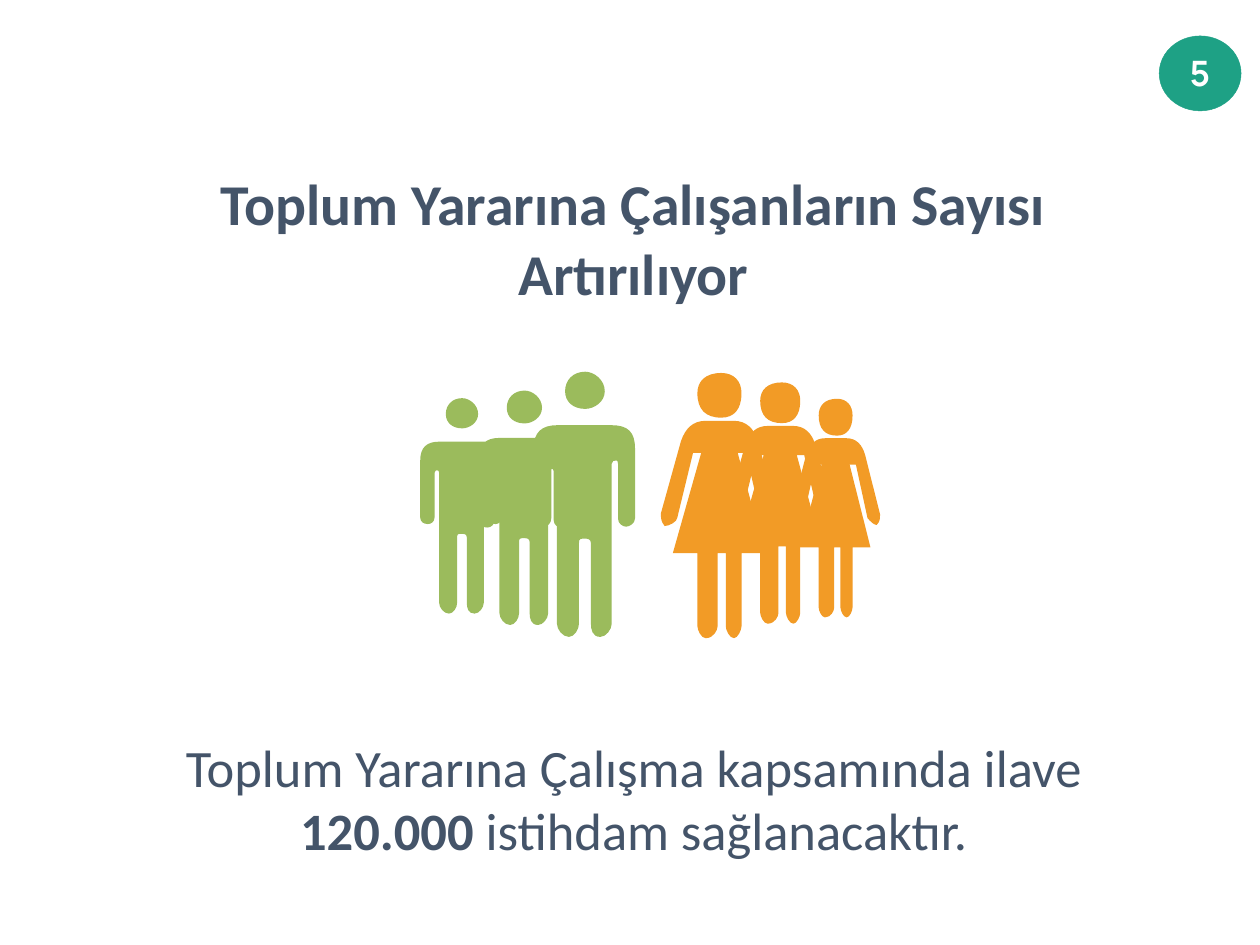
from lxml import etree
from pptx import Presentation, util as u
from pptx.dml.color import RGBColor
from pptx.enum import shapes, text
from pptx.oxml import ns

COLUMNS, ROWS = 20, 15
CELL = u.Inches(1)
SLATE, TEAL, GREEN, ORANGE, WHITE = "445469", "1EA185", "9BBB5C", "F29B26", "FFFFFF"

MAN = {
    "size": (161, 421),
    "body": [
        (124, 85), (37, 85), (13, 85, 0, 96, 0, 122), (0, 233),
        (0, 241, 6, 246, 15, 246), (22, 246, 28, 241, 28, 233), (28, 146),
        (28, 141, 32, 141, 32, 141), (35, 141, 37, 141, 37, 146), (37, 400),
        (37, 409, 46, 421, 56, 421), (65, 421, 72, 409, 72, 400), (72, 272),
        (72, 265, 74, 265, 82, 265), (84, 265, 91, 265, 91, 272), (91, 400),
        (91, 409, 93, 421, 106, 421), (115, 421, 124, 409, 124, 400), (124, 146),
        (124, 141, 128, 141, 132, 141), (132, 141, 134, 141, 134, 146), (134, 233),
        (134, 241, 141, 246, 147, 246), (152, 246, 161, 241, 161, 233), (161, 122),
        (161, 96, 150, 85, 124, 85)],
    "head": [
        (82, 0), (63, 0, 50, 13, 50, 31), (50, 48, 63, 59, 82, 59),
        (96, 59, 113, 48, 113, 31), (113, 13, 96, 0, 82, 0)],
}
WOMAN = {
    "size": (185, 421),
    "body": [
        (185, 223), (154, 108), (148, 88, 135, 76, 116, 76), (71, 76),
        (51, 76, 39, 88, 32, 108), (0, 223), (0, 230, 0, 236, 6, 243),
        (13, 243, 26, 236, 26, 230), (51, 127), (64, 127), (19, 286), (58, 286),
        (58, 402), (58, 408, 64, 421, 71, 421), (84, 421, 90, 408, 90, 402),
        (90, 286), (103, 286), (103, 402), (103, 408, 109, 421, 116, 421),
        (122, 421, 128, 408, 128, 402), (128, 286), (165, 286), (122, 127),
        (135, 127), (159, 230), (165, 236, 172, 243, 178, 243),
        (185, 236, 185, 230, 185, 223)],
    "head": [
        (96, 71), (116, 71, 128, 58, 128, 32), (128, 13, 116, 0, 96, 0),
        (71, 0, 58, 13, 58, 32), (58, 58, 71, 71, 96, 71)],
}


def color(value):
    """Turn a hex string into a colour."""
    return RGBColor.from_string(value)


def cells(*lengths):
    """Turn grid lengths into slide units."""
    return [u.Emu(round(length * CELL)) for length in lengths]


def paint(shape, fill):
    """Give a shape a flat fill without line or shadow."""
    shape.shadow.inherit = False
    shape.fill.solid()
    shape.fill.fore_color.rgb = color(fill)
    shape.line.fill.background()


def write(para, words, size, font="Calibri", fill=SLATE, bold=False):
    """Add a formatted run to a centred paragraph."""
    para.alignment = text.PP_ALIGN.CENTER
    span = para.add_run()
    span.text = words
    span.font.size = u.Pt(size)
    span.font.name = font
    span.font.bold = bold
    span.font.color.rgb = color(fill)


def text_area(page, box, inset, wrap=True, grow=False):
    """Add a text box and return its first paragraph."""
    frame = page.shapes.add_textbox(*cells(*box)).text_frame
    frame.word_wrap = wrap
    if grow:
        frame.auto_size = text.MSO_AUTO_SIZE.SHAPE_TO_FIT_TEXT
    frame.margin_left, frame.margin_right = cells(inset, inset)
    frame.margin_top, frame.margin_bottom = cells(inset / 2, inset / 2)
    return frame.paragraphs[0]


def outline_shape(group, steps, place):
    """Build a closed outline from corners (pairs) and curves (six numbers)."""
    points = [[place(*step[i:i + 2]) for i in range(0, len(step), 2)] for step in steps]
    ends = [step[-1] for step in points]
    builder = group.shapes.build_freeform(*ends[0])
    builder.add_line_segments(ends[1:], close=True)
    shape = builder.convert_to_shape()
    left, top = (min(axis) for axis in zip(*ends))
    for line, step in zip(shape._element.xpath(".//a:lnTo"), points[1:]):
        if len(step) == 3:
            curve = etree.SubElement(line.getparent(), ns.qn("a:cubicBezTo"))
            for x, y in step:
                etree.SubElement(curve, ns.qn("a:pt"), x=str(x - left), y=str(y - top))
            line.getparent().replace(line, curve)
    return shape


def person(page, box, figure, fill):
    """Draw a grouped body and head stretched to the box."""
    left, top, width, height = cells(*box)
    across, down = figure["size"]

    def place(x, y):
        """Map an outline point into the box."""
        return round(left + x * width / across), round(top + y * height / down)

    group = page.shapes.add_group_shape()
    for part in ("body", "head"):
        paint(outline_shape(group, figure[part], place), fill)


def crowd(page, box):
    """Place three men and three women relative to the box."""
    left, top = box[:2]
    people = [
        (MAN, GREEN, 1.8, 0, 1.61, 4.21),
        (WOMAN, ORANGE, 3.82, 0.02, 1.85, 4.21),
        (WOMAN, ORANGE, 4.87, 0.17, 1.68, 3.83),
        (WOMAN, ORANGE, 5.88, 0.43, 1.42, 3.47),
        (MAN, GREEN, 0.93, 0.3, 1.43, 3.72),
        (MAN, GREEN, 0, 0.42, 1.31, 3.42),
    ]
    for figure, fill, x, y, width, height in people:
        person(page, (left + x, top + y, width, height), figure, fill)


def number_badge(page, box, number):
    """Draw the round page number."""
    badge = page.shapes.add_shape(shapes.MSO_SHAPE.OVAL, *cells(*box))
    paint(badge, TEAL)
    badge.line.color.rgb = color(TEAL)
    badge.line.width = u.Pt(0.5)
    left, top = box[:2]
    para = text_area(page, (left + 0.15, top + 0.18, 0.99, 0.82), 0.15,
                     wrap=False, grow=True)
    write(para, number, 40, font="Manrope", fill=WHITE, bold=True)


def headline(page, box):
    """Write the slide title."""
    para = text_area(page, box, 0.08, grow=True)
    write(para, "Toplum Yararına Çalışanların Sayısı Artırılıyor", 66, bold=True)


def statement(page, box):
    """Write the message with its figure in bold."""
    para = text_area(page, box, 0.2)
    write(para, "Toplum Yararına Çalışma kapsamında ilave ", 60)
    write(para, "120.000", 60, bold=True)
    write(para, " istihdam sağlanacaktır.", 60)


def main():
    """Build and save the deck."""
    deck = Presentation()
    deck.slide_width, deck.slide_height = cells(COLUMNS, ROWS)
    page = deck.slides.add_slide(deck.slide_layouts[6])
    number_badge(page, (18.4, 0.57, 1.3, 1.19), "5")
    statement(page, (1.32, 11.57, 17.48, 2.58))
    headline(page, (1.84, 2.63, 16.43, 2.3))
    crowd(page, (6.67, 5.9, 7.3, 4.21))
    deck.save("out.pptx")


if __name__ == "__main__":
    main()
